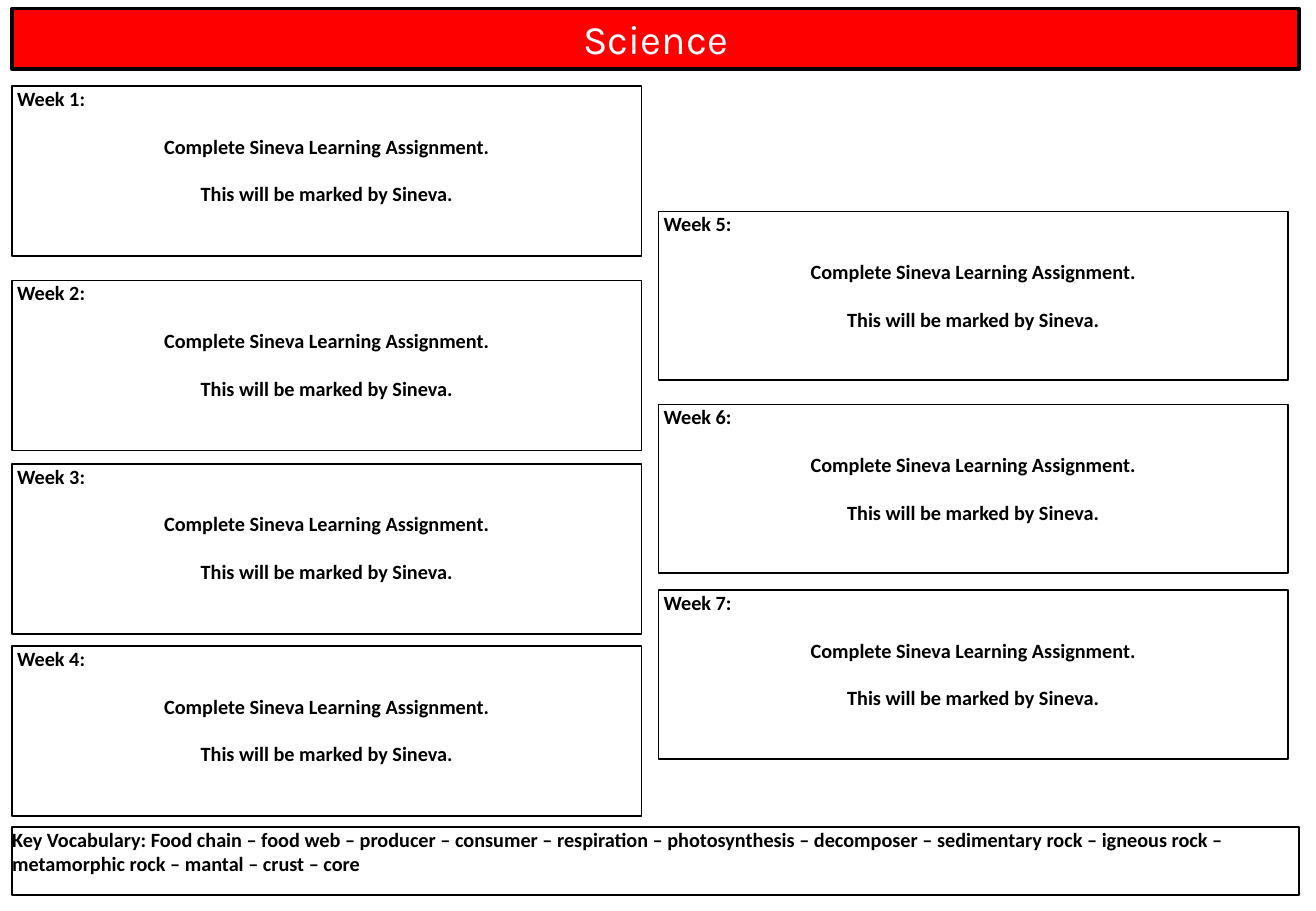
"""Build the Science homework slide: a title bar, seven weekly boxes and key vocabulary."""
from pptx import Presentation
from pptx.dml.color import RGBColor
from pptx.enum.shapes import MSO_SHAPE as Shape
from pptx.enum.text import MSO_ANCHOR as Anchor, MSO_AUTO_SIZE as AutoSize, PP_ALIGN as Align
from pptx.util import Inches, Pt

TITLE = "Science"
TASK = ("Complete Sineva Learning Assignment.", "This will be marked by Sineva.")
VOCABULARY = (
    "Food chain", "food web", "producer", "consumer", "respiration", "photosynthesis",
    "decomposer", "sedimentary rock", "igneous rock", "metamorphic rock", "mantal",
    "crust", "core",
)
COLORS = {"banner": "FF0000", "ink": "000000", "title": "FFFFFF"}

SLIDE_WIDTH, SLIDE_HEIGHT = 10.83, 7.5
MARGIN, GUTTER = 0.1, 0.14
BOX_WIDTH = 5.18
FULL_WIDTH = 10.59
BANNER_TOP, BANNER_HEIGHT = 0.07, 0.5
VOCABULARY_TOP, VOCABULARY_HEIGHT = 6.81, 0.56
WEEK_COLUMNS = (
    {"height": 1.4, "tops": (0.71, 2.31, 3.82, 5.32)},
    {"height": 1.39, "tops": (1.74, 3.33, 4.86)},
)
LABEL_INDENT = 0.04
LINE_GAP = 13.9


def color(name):
    return RGBColor.from_string(COLORS[name])


def add_box(page, left, top, width, height, line_width=1):
    box = page.shapes.add_shape(
        Shape.RECTANGLE, Inches(left), Inches(top), Inches(width), Inches(height))
    box.shadow.inherit = False
    box.fill.background()
    box.line.color.rgb = color("ink")
    box.line.width = Pt(line_width)
    frame = box.text_frame
    frame.word_wrap = True
    frame.vertical_anchor = Anchor.TOP
    frame.margin_left = frame.margin_right = frame.margin_top = frame.margin_bottom = 0
    return box


def write(para, text, align=Align.LEFT, font="Calibri", size=12, ink="ink", bold=True):
    para.alignment = align
    span = para.add_run()
    span.text = text
    span.font.name = font
    span.font.size = Pt(size)
    span.font.bold = bold
    span.font.color.rgb = color(ink)


def add_banner(page):
    box = add_box(page, MARGIN, BANNER_TOP, FULL_WIDTH, BANNER_HEIGHT, 2.25)
    box.fill.solid()
    box.fill.fore_color.rgb = color("banner")
    frame = box.text_frame
    frame.margin_left = frame.margin_right = Inches(0.1)
    frame.margin_top = frame.margin_bottom = Inches(0.05)
    frame.auto_size = AutoSize.SHAPE_TO_FIT_TEXT
    write(frame.paragraphs[0], TITLE, Align.CENTER, "Karla", 24, "title", False)


def add_week(page, week, left, top, height):
    frame = add_box(page, left, top, BOX_WIDTH, height).text_frame
    label = frame.paragraphs[0]
    label._p.get_or_add_pPr().set("marL", str(Inches(LABEL_INDENT)))
    write(label, f"Week {week}:")
    for line in TASK:
        para = frame.add_paragraph()
        para.space_before = Pt(LINE_GAP)
        write(para, line, Align.CENTER)


def main():
    deck = Presentation()
    deck.slide_width, deck.slide_height = Inches(SLIDE_WIDTH), Inches(SLIDE_HEIGHT)
    page = deck.slides.add_slide(deck.slide_layouts[6])
    add_banner(page)
    week = 0
    for index, column in enumerate(WEEK_COLUMNS):
        left = MARGIN + index * (BOX_WIDTH + GUTTER)
        for top in column["tops"]:
            week += 1
            add_week(page, week, left, top, column["height"])
    box = add_box(page, MARGIN, VOCABULARY_TOP, FULL_WIDTH, VOCABULARY_HEIGHT)
    write(box.text_frame.paragraphs[0], "Key Vocabulary: " + " – ".join(VOCABULARY))
    deck.save("out.pptx")


if __name__ == "__main__":
    main()
